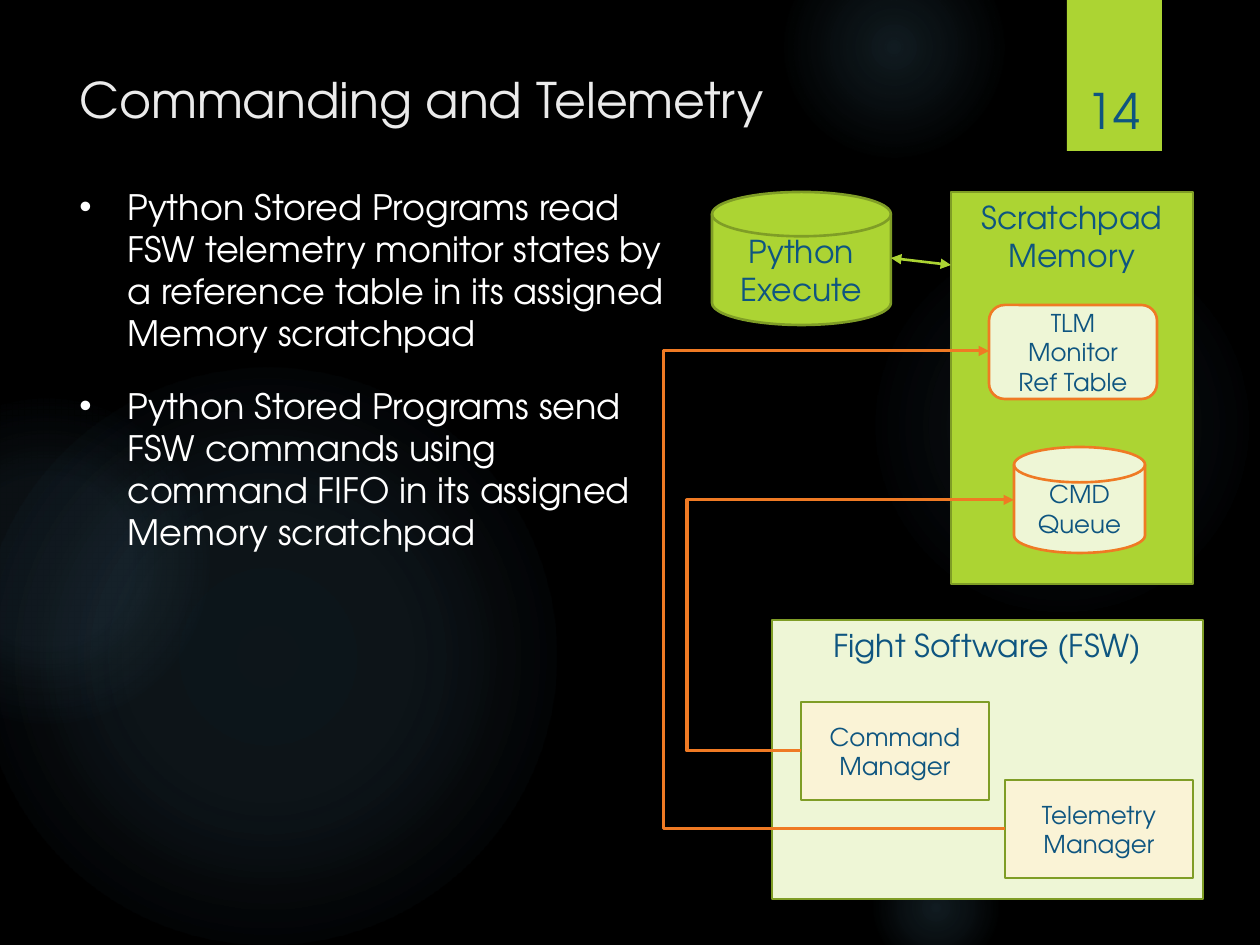
from lxml import etree
from pptx import Presentation
from pptx.dml.color import RGBColor
from pptx.enum import shapes, text
from pptx.oxml import parse_xml
from pptx.oxml.ns import nsdecls, qn
from pptx.util import Emu, Pt

SCALE = 914400 / 126
FONT = "TeX Gyre Adventor"
COLORS = {
    "background": "000000",
    "glow": "7AC4F0",
    "green": "ACD433",
    "dark_green": "7F9D26",
    "pale_green": "EEF6D6",
    "cream": "FAF3D6",
    "orange": "EF7A24",
    "blue": "0E5580",
    "title": "EBEBEB",
    "white": "FFFFFF",
}
SHAPE = shapes.MSO_SHAPE
TOP = text.MSO_ANCHOR.TOP
MIDDLE = text.MSO_ANCHOR.MIDDLE
BOTTOM = text.MSO_ANCHOR.BOTTOM


def px(length):
    return Emu(round(length * SCALE))


def color(name):
    return RGBColor.from_string(COLORS[name])


def write(shape, lines, size, font_color, anchor, align):
    frame = shape.text_frame
    frame.word_wrap = True
    frame.auto_size = text.MSO_AUTO_SIZE.NONE
    frame.vertical_anchor = anchor
    for index, line in enumerate(lines):
        paragraph = frame.add_paragraph() if index else frame.paragraphs[0]
        paragraph.alignment = align
        run = paragraph.add_run()
        run.text = line
        run.font.size = Pt(size)
        run.font.name = FONT
        run.font.color.rgb = color(font_color)
    return frame.paragraphs


def add_text(slide, box, lines, size, font_color, anchor=TOP, align=text.PP_ALIGN.LEFT):
    shape = slide.shapes.add_textbox(*map(px, box))
    return write(shape, lines, size, font_color, anchor, align)


def add_block(slide, kind, box, fill, line=None, lines=(), size=14, anchor=MIDDLE):
    shape = slide.shapes.add_shape(kind, *map(px, box))
    shape.shadow.inherit = False
    shape.fill.solid()
    shape.fill.fore_color.rgb = color(fill)
    if line:
        shape.line.color.rgb = color(line)
        shape.line.width = Pt(1.5)
    else:
        shape.line.fill.background()
    write(shape, lines, size, "blue", anchor, text.PP_ALIGN.CENTER)
    return shape


def add_arrow(slide, kind, start, end, line, width, ends):
    connector = slide.shapes.add_connector(kind, *map(px, start + end))
    connector.line.color.rgb = color(line)
    connector.line.width = Pt(width)
    outline = connector.line._get_or_add_ln()
    for name in ends:
        etree.SubElement(outline, qn(f"a:{name}"), type="triangle")
    etree.SubElement(connector._element.spPr, qn("a:effectLst"))
    return connector


def add_elbow(slide, start, end, bend_x):
    connector = add_arrow(
        slide, shapes.MSO_CONNECTOR.ELBOW, start, end, "orange", 1.75, ["tailEnd"]
    )
    bend = round((bend_x - start[0]) / (end[0] - start[0]) * 100000)
    geometry = connector._element.spPr.find(qn("a:prstGeom"))
    guides = geometry.find(qn("a:avLst"))
    if guides is None:
        guides = etree.SubElement(geometry, qn("a:avLst"))
    etree.SubElement(guides, qn("a:gd"), name="adj1", fmla=f"val {bend}")


def add_glow(slide, left, top, diameter, stops):
    shape = add_block(slide, SHAPE.OVAL, (left, top, diameter, diameter), "glow")
    stop_xml = "".join(
        f'<a:gs pos="{position * 1000}"><a:srgbClr val="{COLORS["glow"]}">'
        f'<a:alpha val="{alpha * 1000}"/></a:srgbClr></a:gs>'
        for position, alpha in stops
    )
    gradient = parse_xml(
        f'<a:gradFill {nsdecls("a")} rotWithShape="1"><a:gsLst>{stop_xml}</a:gsLst>'
        '<a:path path="circle"><a:fillToRect l="50000" t="50000" r="50000" b="50000"/>'
        "</a:path></a:gradFill>"
    )
    properties = shape._element.spPr
    properties.replace(properties.find(qn("a:solidFill")), gradient)


def draw_backdrop(slide):
    slide.background.fill.solid()
    slide.background.fill.fore_color.rgb = color("background")
    for left, top, diameter, inner, middle, edge in [
        (868, 231, 388, 7, 6, 69),
        (784, -63, 220, 14, 7, 73),
        (868, 840, 136, 14, 7, 66),
        (-21, 368, 577, 11, 10, 75),
        (-116, 399, 325, 8, 8, 72),
    ]:
        add_glow(slide, left, top, diameter, [(0, inner), (36, middle), (edge, 0), (100, 0)])


def draw_page_tab(slide, left, top, width, height):
    add_block(slide, SHAPE.RECTANGLE, (left, top, width, height), "green")
    number_box = (left + 3, top + 40, 87, 106)
    add_text(slide, number_box, ["14"], 28, "blue", BOTTOM, text.PP_ALIGN.CENTER)


def draw_bullets(slide, box, lines):
    paragraphs = add_text(slide, box, lines, 20, "white")
    for index, paragraph in enumerate(paragraphs):
        properties = paragraph._p.get_or_add_pPr()
        properties.set("marL", str(px(48)))
        properties.set("indent", str(px(-48)))
        if index:
            paragraph.space_before = Pt(18)
        etree.SubElement(properties, qn("a:buFont"), typeface="Arial")
        etree.SubElement(properties, qn("a:buChar"), char="•")


def draw_scratchpad(slide, left, top, width, height):
    add_block(slide, SHAPE.RECTANGLE, (left, top, width, height), "green", "dark_green",
              ["Scratchpad", "Memory"], 18, TOP)
    add_block(slide, SHAPE.FLOWCHART_MAGNETIC_DISK, (left + 63, top + 255, 131, 106),
              "pale_green", "orange", ["CMD", "Queue"])
    add_block(slide, SHAPE.ROUNDED_RECTANGLE, (left + 38, top + 113, 168, 94),
              "pale_green", "orange", ["TLM Monitor Ref Table"])


def draw_flight_software(slide, left, top, width, height):
    add_block(slide, SHAPE.RECTANGLE, (left, top, width, height), "pale_green", "dark_green",
              ["Fight Software (FSW)"], 18, TOP)
    for name, x, y in [("Command", 29, 82), ("Telemetry", 233, 160)]:
        add_block(slide, SHAPE.RECTANGLE, (left + x, top + y, 188, 98),
                  "cream", "dark_green", [name, "Manager"])


def draw_links(slide):
    add_arrow(slide, shapes.MSO_CONNECTOR.STRAIGHT, (891, 258), (951, 265),
              "green", 1.5, ["headEnd", "tailEnd"])
    add_elbow(slide, (801, 751), (1014, 500), 687)
    add_elbow(slide, (1005, 829), (989, 351), 664)


def main():
    presentation = Presentation()
    presentation.slide_width = px(1260)
    presentation.slide_height = px(945)
    slide = presentation.slides.add_slide(presentation.slide_layouts[6])
    draw_backdrop(slide)
    draw_page_tab(slide, 1067, 0, 95, 151)
    add_text(slide, (67, 63, 973, 193), ["Commanding and Telemetry"], 28, "title")
    draw_bullets(slide, (67, 179, 620, 721), [
        "Python Stored Programs read FSW telemetry monitor states by "
        "a reference table in its assigned Memory scratchpad",
        "Python Stored Programs send FSW commands using "
        "command FIFO in its assigned Memory scratchpad",
    ])
    add_block(slide, SHAPE.FLOWCHART_MAGNETIC_DISK, (712, 192, 179, 133),
              "green", "dark_green", ["Python", "Execute"], 18)
    draw_scratchpad(slide, 951, 192, 242, 392)
    draw_flight_software(slide, 772, 620, 431, 279)
    draw_links(slide)
    presentation.save("out.pptx")


if __name__ == "__main__":
    main()
